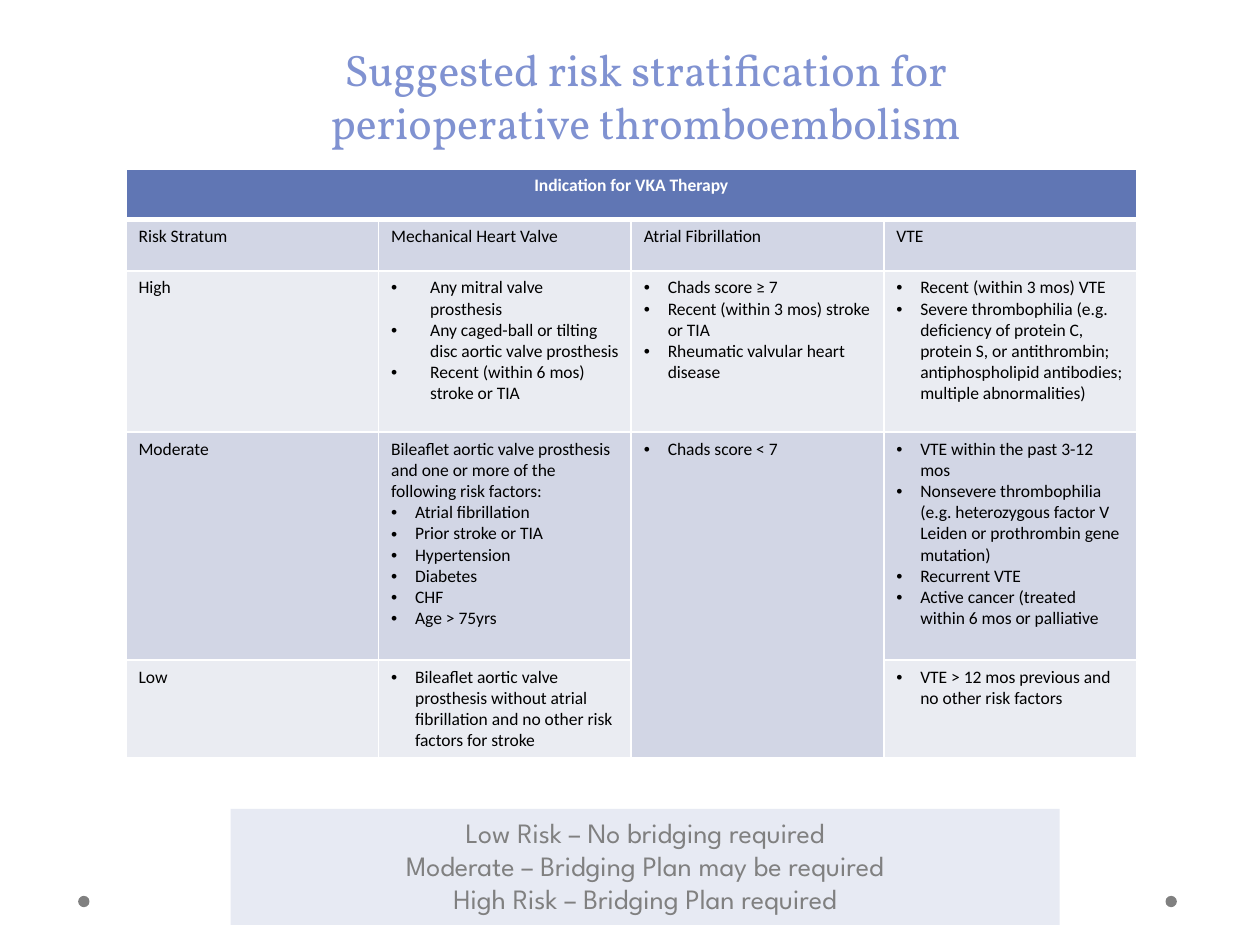
import dataclasses

import pptx
import pptx.dml.color
import pptx.enum.dml
import pptx.enum.shapes
import pptx.enum.text
import pptx.oxml
import pptx.oxml.ns
import pptx.util
from lxml import etree

Inches = pptx.util.Inches
Pt = pptx.util.Pt
qn = pptx.oxml.ns.qn


@dataclasses.dataclass(frozen=True)
class Theme:
    title_font: str = "Vollkorn"
    table_font: str = "Calibri"
    body_font: str = "League Spartan"
    title_size: float = 25.2
    table_size: float = 10
    body_size: float = 16
    title_leading: float = 30.3
    body_leading: float = 19.1
    title: str = "8092D1"
    accent: str = "6076B4"
    band_dark: str = "D2D6E5"
    band_light: str = "EAECF2"
    gray: str = "808080"
    white: str = "FFFFFF"
    black: str = "000000"


THEME = Theme()
WIDE_INDENT = 0.31
BULLET_INDENT = 0.19
ROW_HEIGHTS = (0.4, 0.41, 1.28, 1.81, 0.77)
TITLE = "Suggested risk stratification for perioperative thromboembolism"
PLANS = (
    "Low Risk – No bridging required",
    "Moderate – Bridging Plan may be required",
    "High Risk – Bridging Plan required",
)
HEADER = "Indication for VKA Therapy"
ROWS = (
    (["Risk Stratum"], ["Mechanical Heart Valve"], ["Atrial Fibrillation"], ["VTE"]),
    (
        ["High"],
        ["•Any mitral valve prosthesis",
         "•Any caged-ball or tilting disc aortic valve prosthesis",
         "•Recent (within 6 mos) stroke or TIA"],
        ["•Chads score ≥ 7",
         "•Recent (within 3 mos) stroke or TIA",
         "•Rheumatic valvular heart disease"],
        ["•Recent (within 3 mos) VTE",
         "•Severe thrombophilia (e.g. deficiency of protein C, protein S, or "
         "antithrombin; antiphospholipid antibodies; multiple abnormalities)"],
    ),
    (
        ["Moderate"],
        ["Bileaflet aortic valve prosthesis and one or more of the following risk factors:",
         "•Atrial fibrillation", "•Prior stroke or TIA", "•Hypertension",
         "•Diabetes", "•CHF", "•Age > 75yrs"],
        ["•Chads score < 7"],
        ["•VTE within the past 3-12 mos",
         "•Nonsevere thrombophilia (e.g. heterozygous factor V Leiden or "
         "prothrombin gene mutation)",
         "•Recurrent VTE",
         "•Active cancer (treated within 6 mos or palliative"],
    ),
    (
        ["Low"],
        ["•Bileaflet aortic valve prosthesis without atrial fibrillation "
         "and no other risk factors for stroke"],
        [],
        ["•VTE > 12 mos previous and no other risk factors"],
    ),
)


def paint(fill, color):
    fill.solid()
    fill.fore_color.rgb = pptx.dml.color.RGBColor.from_string(color)


def place(shape, left, top, width, height):
    shape.left, shape.top = Inches(left), Inches(top)
    shape.width, shape.height = Inches(width), Inches(height)


def style(paragraph, font, size, color, bold=False, centered=False):
    paragraph.font.name = font
    paragraph.font.size = Pt(size)
    paragraph.font.bold = bold
    paragraph.font.color.rgb = pptx.dml.color.RGBColor.from_string(color)
    if centered:
        paragraph.alignment = pptx.enum.text.PP_ALIGN.CENTER


def set_bullet(paragraph, indent, character=None):
    properties = paragraph._p.get_or_add_pPr()
    properties.set("marL", str(Inches(indent)))
    properties.set("indent", str(-Inches(indent)))
    if character:
        font = etree.SubElement(properties, qn("a:buFont"))
        font.set("typeface", "Arial")
        bullet = etree.SubElement(properties, qn("a:buChar"))
        bullet.set("char", character)
    else:
        etree.SubElement(properties, qn("a:buNone"))


def set_borders(cell, top=1, bottom=1):
    properties = cell._tc.get_or_add_tcPr()
    for side, width in (("L", 1), ("R", 1), ("T", top), ("B", bottom)):
        line = etree.SubElement(properties, qn(f"a:ln{side}"))
        line.set("w", str(Pt(width)))
        fill = etree.SubElement(line, qn("a:solidFill"))
        etree.SubElement(fill, qn("a:srgbClr")).set("val", THEME.white)


def fill_placeholder(shape, lines, font, size, color, leading, anchor):
    frame = shape.text_frame
    frame.text = "\n".join(lines)
    frame.word_wrap = True
    frame.auto_size = pptx.enum.text.MSO_AUTO_SIZE.NONE
    frame.vertical_anchor = anchor
    for paragraph in frame.paragraphs:
        paragraph.space_before = Pt(0)
        paragraph.line_spacing = Pt(leading)
        set_bullet(paragraph, 0)
        style(paragraph, font, size, color, centered=True)


def add_title(slide):
    shape = slide.shapes.title
    place(shape, 2, 0.25, 6.25, 0.98)
    fill_placeholder(shape, [TITLE], THEME.title_font, THEME.title_size, THEME.title,
                     THEME.title_leading, pptx.enum.text.MSO_ANCHOR.BOTTOM)


def add_plans(slide):
    shape = slide.placeholders[1]
    place(shape, 1.83, 6.42, 6.58, 0.92)
    paint(shape.fill, THEME.accent)
    color = shape._element.spPr.find(".//" + qn("a:srgbClr"))
    etree.SubElement(color, qn("a:alpha")).set("val", "15000")
    fill_placeholder(shape, PLANS, THEME.body_font, THEME.body_size, THEME.gray,
                     THEME.body_leading, pptx.enum.text.MSO_ANCHOR.TOP)


def add_dot(slide, left):
    dot = slide.shapes.add_shape(pptx.enum.shapes.MSO_SHAPE.OVAL, Inches(left),
                                 Inches(7.11), Inches(0.09), Inches(0.09))
    dot.shadow.inherit = False
    paint(dot.fill, THEME.gray)
    dot.line.fill.background()


def fill_cell(cell, lines, indent):
    cell.text = "\n".join(line.removeprefix("•") for line in lines)
    for paragraph, line in zip(cell.text_frame.paragraphs, lines):
        if line.startswith("•"):
            set_bullet(paragraph, indent, "•")
        style(paragraph, THEME.table_font, THEME.table_size, THEME.black)


def add_risk_table(slide):
    columns = len(ROWS[0])
    frame = slide.shapes.add_table(len(ROW_HEIGHTS), columns, Inches(1), Inches(1.34),
                                   Inches(8.02), Inches(sum(ROW_HEIGHTS)))
    table = frame.table
    for row, height in zip(table.rows, ROW_HEIGHTS):
        row.height = Inches(height)
    for column in range(columns):
        header = table.cell(0, column)
        set_borders(header, bottom=3)
        paint(header.fill, THEME.accent)
    for row, contents in enumerate(ROWS, start=1):
        for column, lines in enumerate(contents):
            cell = table.cell(row, column)
            set_borders(cell, top=3 if row == 1 else 1)
            paint(cell.fill, THEME.band_dark if row % 2 else THEME.band_light)
            if lines:
                wide = (row, column) == (2, 1)
                fill_cell(cell, lines, WIDE_INDENT if wide else BULLET_INDENT)
    header = table.cell(0, 0)
    header.merge(table.cell(0, columns - 1))
    header.text = HEADER
    style(header.text_frame.paragraphs[0], THEME.table_font, THEME.table_size,
          THEME.white, bold=True, centered=True)
    table.cell(3, 2).merge(table.cell(4, 2))


def main():
    presentation = pptx.Presentation()
    presentation.slide_width, presentation.slide_height = Inches(10), Inches(7.5)
    slide = presentation.slides.add_slide(presentation.slide_layouts[1])
    for left in (9.25, 0.62):
        add_dot(slide, left)
    add_title(slide)
    add_risk_table(slide)
    add_plans(slide)
    presentation.save("out.pptx")


if __name__ == "__main__":
    main()
